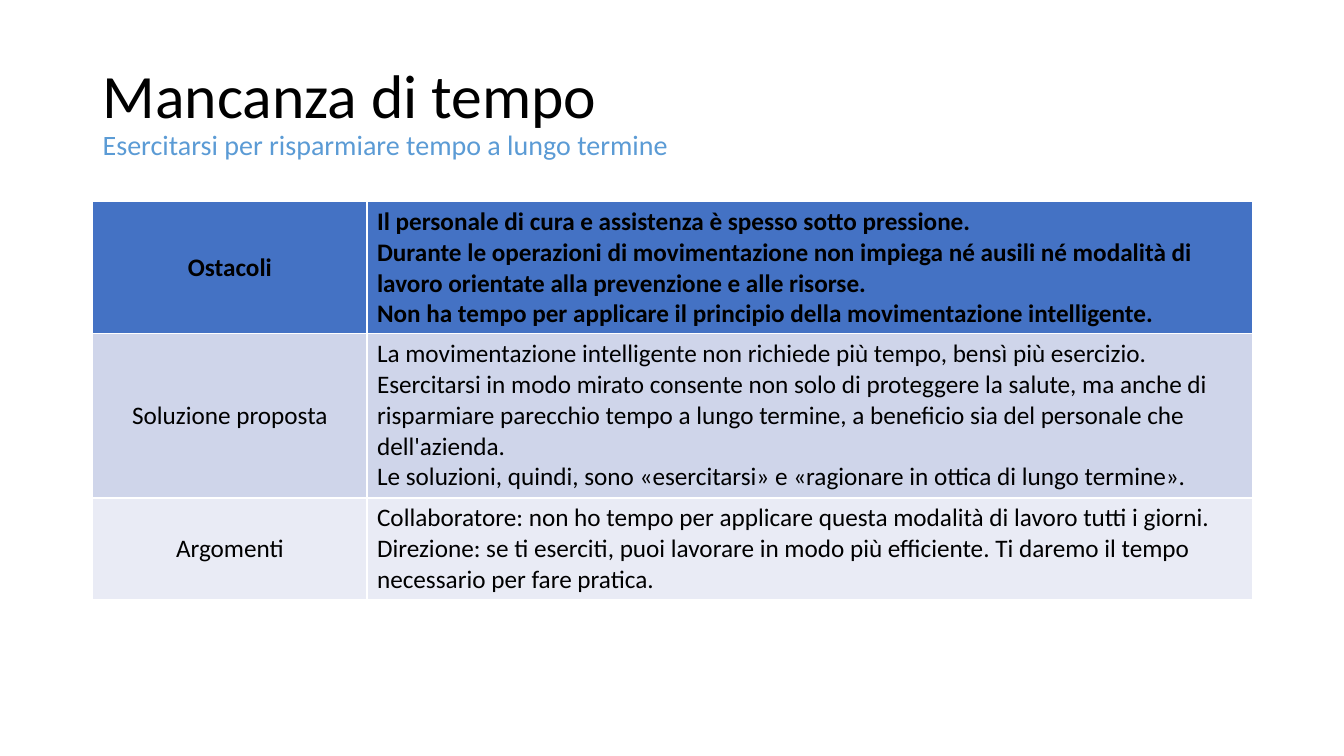
from pptx import Presentation
from pptx.dml.color import RGBColor
from pptx.enum.text import MSO_ANCHOR, PP_ALIGN
from pptx.util import Inches, Pt

MIDDLE = MSO_ANCHOR.MIDDLE
CENTER, LEFT = PP_ALIGN.CENTER, PP_ALIGN.LEFT

BLACK = RGBColor(0x00, 0x00, 0x00)
SKY = RGBColor(0x5B, 0x9B, 0xD5)
BLUE = RGBColor(0x44, 0x72, 0xC4)
MIST = RGBColor(0xCF, 0xD5, 0xEA)
PALE = RGBColor(0xE9, 0xEB, 0xF5)
FONT = "Calibri"

TITLE = [
    ("Mancanza di tempo", 44, BLACK),
    ("Esercitarsi per risparmiare tempo a lungo termine", 20, SKY),
]
ROWS = [
    ("Ostacoli", [
        "Il personale di cura e assistenza è spesso sotto pressione. \v"
        "Durante le operazioni di movimentazione non impiega né ausili né modalità di "
        "lavoro orientate alla prevenzione e alle risorse.",
        "Non ha tempo per applicare il principio della movimentazione intelligente.",
    ], BLUE, 1.31),
    ("Soluzione proposta", [
        "La movimentazione intelligente non richiede più tempo, bensì più esercizio. "
        "Esercitarsi in modo mirato consente non solo di proteggere la salute, ma anche di "
        "risparmiare parecchio tempo a lungo termine, a beneficio sia del personale che "
        "dell'azienda.",
        "Le soluzioni, quindi, sono «esercitarsi» e «ragionare in ottica di lungo termine».",
    ], MIST, 1.63),
    ("Argomenti", [
        "Collaboratore: non ho tempo per applicare questa modalità di lavoro tutti i giorni.",
        "Direzione: se ti eserciti, puoi lavorare in modo più efficiente. "
        "Ti daremo il tempo necessario per fare pratica.",
    ], PALE, 1.01),
]

WIDE, HIGH = 13.33, 7.5
EDGE = 0.92
SPAN = 11.5
COLS = (2.72, SPAN - 2.72)


def add_title(slide):
    box = slide.shapes.add_textbox(Inches(EDGE), Inches(0.4), Inches(SPAN), Inches(1.45))
    frame = box.text_frame
    frame.word_wrap = True
    frame.vertical_anchor = MIDDLE
    para = frame.paragraphs[0]
    para.line_spacing = 0.9
    para.font.name = FONT
    for i, (text, size, color) in enumerate(TITLE):
        if i:
            para.add_line_break()
        run = para.add_run()
        run.text = text
        run.font.name = FONT
        run.font.size = Pt(size)
        run.font.color.rgb = color


def fill_cell(cell, lines, align, fill, bold):
    cell.fill.solid()
    cell.fill.fore_color.rgb = fill
    cell.vertical_anchor = MIDDLE
    frame = cell.text_frame
    frame.text = "\n".join(lines)
    for para in frame.paragraphs:
        para.alignment = align
        font = para.font
        font.name, font.size, font.bold = FONT, Pt(18), bold
        font.color.rgb = BLACK


def add_grid(slide):
    tall = sum(row[-1] for row in ROWS)
    grid = slide.shapes.add_table(
        len(ROWS), len(COLS), Inches(EDGE), Inches(2), Inches(SPAN), Inches(tall)).table
    for col, width in zip(grid.columns, COLS):
        col.width = Inches(width)
    for i, (label, lines, fill, height) in enumerate(ROWS):
        grid.rows[i].height = Inches(height)
        fill_cell(grid.cell(i, 0), [label], CENTER, fill, i == 0)
        fill_cell(grid.cell(i, 1), lines, LEFT, fill, i == 0)


def main():
    deck = Presentation()
    deck.slide_width, deck.slide_height = Inches(WIDE), Inches(HIGH)
    slide = deck.slides.add_slide(deck.slide_layouts[6])
    add_title(slide)
    add_grid(slide)
    deck.save("out.pptx")


if __name__ == "__main__":
    main()
